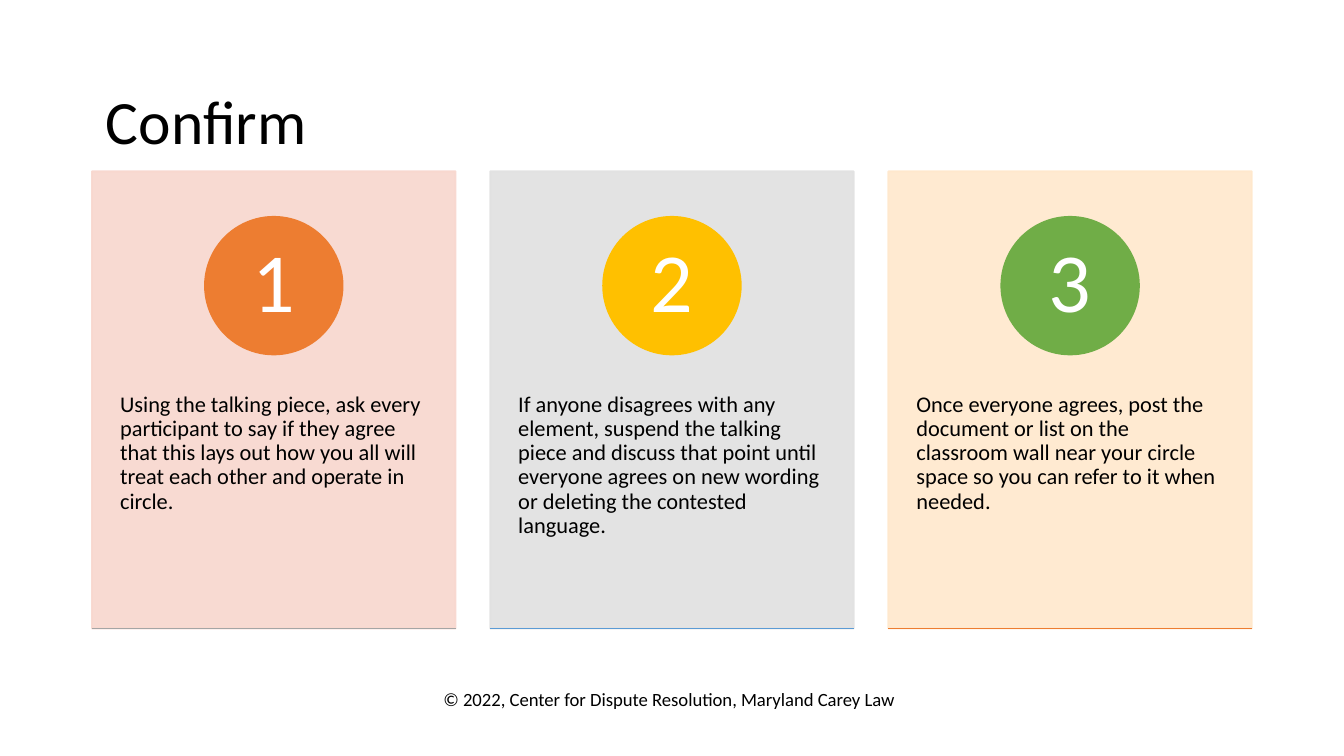
import pptx
import pptx.dml.color
import pptx.enum.shapes
import pptx.enum.text
import pptx.oxml.ns
import pptx.util
from lxml import etree
from pptx.util import Cm

FONT = "Calibri"
ALIGN = pptx.enum.text.PP_ALIGN
ANCHOR = pptx.enum.text.MSO_ANCHOR
SHAPE = pptx.enum.shapes.MSO_SHAPE

# Card colour, circle colour, base line colour, wording
STEPS = [
    ("F8D7CE", "ED7D31", "A5A5A5",
     "Using the talking piece, ask every participant to say if they agree "
     "that this lays out how you all will treat each other and operate in circle."),
    ("E1E1E1", "FFC000", "5B9BD5",
     "If anyone disagrees with any element, suspend the talking piece and discuss "
     "that point until everyone agrees on new wording or deleting the contested language."),
    ("FFE8CC", "70AD47", "ED7D31",
     "Once everyone agrees, post the document or list on the classroom wall "
     "near your circle space so you can refer to it when needed."),
]


def color(hex_string):
    return pptx.dml.color.RGBColor.from_string(hex_string)


def set_text(shape, text, size, hex_string="000000", align=ALIGN.LEFT,
             anchor=ANCHOR.TOP, insets=(0.25, 0.13), spacing=0.9, wrap=True):
    frame = shape.text_frame
    frame.word_wrap = wrap
    frame.vertical_anchor = anchor
    frame.margin_left = frame.margin_right = Cm(insets[0])
    frame.margin_top = frame.margin_bottom = Cm(insets[1])
    para = frame.paragraphs[0]
    para.text = text
    para.alignment = align
    para.line_spacing = spacing
    para.font.name = FONT
    para.font.size = pptx.util.Pt(size)
    para.font.color.rgb = color(hex_string)


def add_text(page, left, top, width, height, text, size, **options):
    box = page.shapes.add_textbox(Cm(left), Cm(top), Cm(width), Cm(height))
    set_text(box, text, size, **options)


def add_filled(page, kind, left, top, width, height, hex_string, opacity=100):
    shape = page.shapes.add_shape(kind, Cm(left), Cm(top), Cm(width), Cm(height))
    shape.shadow.inherit = False
    shape.fill.solid()
    shape.fill.fore_color.rgb = color(hex_string)
    shape.line.color.rgb = color(hex_string)
    shape.line.width = pptx.util.Pt(1)
    if opacity < 100:
        for element in shape._element.spPr.iter(pptx.oxml.ns.qn("a:srgbClr")):
            alpha = etree.SubElement(element, pptx.oxml.ns.qn("a:alpha"))
            alpha.set("val", str(opacity * 1000))
    return shape


def add_card(page, left, top, width, height, number, step):
    card_color, circle_color, line_color, wording = step
    add_filled(page, SHAPE.RECTANGLE, left, top, width, height, card_color, opacity=90)
    add_text(page, left, top + 3.28, width, 5.18, wording, 12, insets=(0.53, 0.91))

    # Numbered circle, centred across the card
    diameter = 2.6
    circle = add_filled(page, SHAPE.OVAL, left + (width - diameter) / 2, top + 0.86,
                        diameter, diameter, circle_color)
    set_text(circle, str(number), 45, "FFFFFF", align=ALIGN.CENTER,
             anchor=ANCHOR.MIDDLE, insets=(0.2, 0.03))

    # Line along the bottom edge
    bottom = Cm(top + height)
    rule = page.shapes.add_connector(pptx.enum.shapes.MSO_CONNECTOR.STRAIGHT,
                                     Cm(left), bottom, Cm(left + width), bottom)
    rule.line.color.rgb = color(line_color)
    rule.line.width = pptx.util.Pt(1)
    etree.SubElement(rule._element.spPr, pptx.oxml.ns.qn("a:effectLst"))


def add_cards(page, left, top, width, height):
    card_width = 6.87
    pitch = (width - card_width) / (len(STEPS) - 1)
    for index, step in enumerate(STEPS):
        add_card(page, left + index * pitch, top, card_width, height, index + 1, step)


def main():
    deck = pptx.Presentation()
    deck.slide_width, deck.slide_height = Cm(25.4), Cm(14.29)
    page = deck.slides.add_slide(deck.slide_layouts[6])

    # Title
    add_text(page, 1.75, 1.45, 21.9, 1.8, "Confirm", 33, anchor=ANCHOR.MIDDLE)
    # Three steps
    add_cards(page, 1.74, 3.24, 21.92, 8.64)
    # Copyright line
    add_text(page, 8.13, 12.88, 9.12, 0.69,
             "© 2022, Center for Dispute Resolution, Maryland Carey Law", 10,
             spacing=1.0, wrap=False)

    deck.save("out.pptx")


if __name__ == "__main__":
    main()
